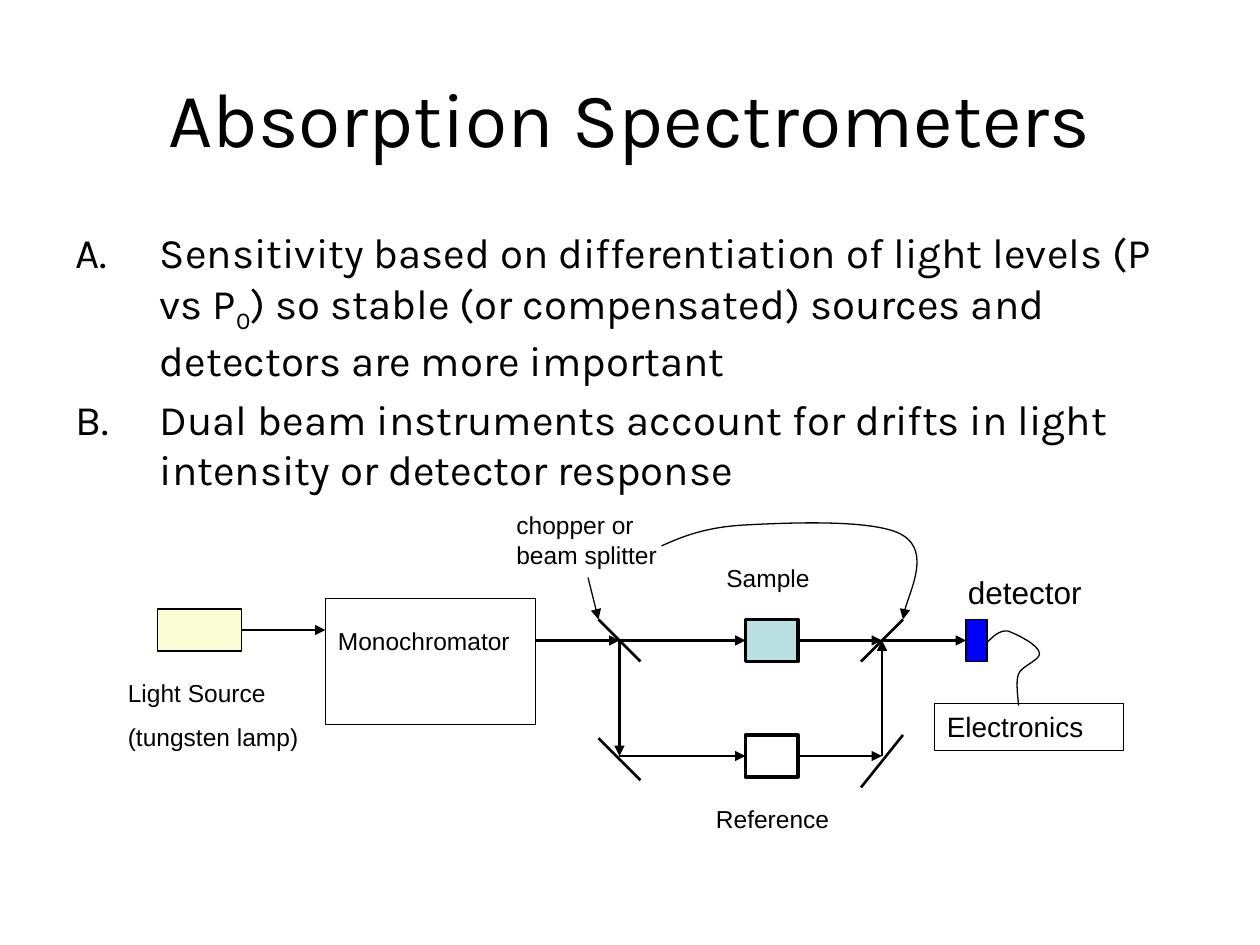
from pptx import Presentation
from pptx.dml.color import RGBColor
from pptx.enum.shapes import MSO_CONNECTOR as Connector, MSO_SHAPE as Preset
from pptx.enum.text import MSO_ANCHOR as Anchor, MSO_AUTO_SIZE as AutoSize, PP_ALIGN as Align
from pptx.oxml.ns import qn
from pptx.util import Inches, Pt
from lxml.etree import SubElement

COLORS = {"ink": "000000", "lamp": "FBFED4", "sample": "BBE0E3",
          "reference": "FFFFFF", "detector": "0000FF"}
HEADING_FONT, LABEL_FONT = "Karla", "Arial"
THIN, BEAM, CELL = 0.75, 1.5, 2
CELLS_PER_INCH = 12  # the diagram grid


def color(name):
    return RGBColor.from_string(COLORS[name])


def add_run(paragraph, text, size, font):
    run = paragraph.add_run()
    run.text = text
    run.font.size, run.font.name = Pt(size), font
    run.font.color.rgb = color("ink")
    return run


def style_line(shape, width, arrow=False):
    shape.line.color.rgb = color("ink")
    shape.line.width = Pt(width)
    if arrow:
        line = shape._element.spPr.find(qn("a:ln"))
        SubElement(line, qn("a:tailEnd"), type="triangle")


class Grid:
    """Places diagram parts by column and row, relative to a box."""

    def __init__(self, shapes, left, top):
        self.shapes, self.left, self.top = shapes, left, top

    def point(self, column, row):
        return (Inches(self.left + column / CELLS_PER_INCH),
                Inches(self.top + row / CELLS_PER_INCH))

    def box(self, column, row, columns, rows):
        return (*self.point(column, row),
                Inches(columns / CELLS_PER_INCH), Inches(rows / CELLS_PER_INCH))

    def rectangle(self, cells, fill=None, width=THIN):
        shape = self.shapes.add_shape(Preset.RECTANGLE, *self.box(*cells))
        shape.shadow.inherit = False
        if fill:
            shape.fill.solid()
            shape.fill.fore_color.rgb = color(fill)
        else:
            shape.fill.background()
        style_line(shape, width)
        return shape

    def label(self, cells, lines, size=14):
        fill_label(self.shapes.add_textbox(*self.box(*cells)), lines, size)

    def line(self, start, end, width=BEAM, arrow=False):
        connector = self.shapes.add_connector(
            Connector.STRAIGHT, *self.point(*start), *self.point(*end))
        style_line(connector, width, arrow)
        SubElement(connector._element.spPr, qn("a:effectLst"))

    def curve(self, points, arrow=False):
        """Draws a start point followed by triples of Bézier points."""
        builder = self.shapes.build_freeform(*self.point(*points[0]))
        builder.add_line_segments([self.point(*p) for p in points[1:]], close=False)
        shape = builder.convert_to_shape()
        path = next(shape._element.iter(qn("a:path")))
        segments = path.findall(qn("a:lnTo"))
        for first in range(0, len(segments), 3):
            bezier = SubElement(path, qn("a:cubicBezTo"))
            for segment in segments[first:first + 3]:
                bezier.append(segment[0])
                path.remove(segment)
        shape.fill.background()
        shape.shadow.inherit = False
        style_line(shape, THIN, arrow)


def fill_label(shape, lines, size):
    frame = shape.text_frame
    frame.word_wrap = True
    frame.vertical_anchor = Anchor.TOP
    for index, text in enumerate(lines):
        paragraph = frame.paragraphs[0] if index == 0 else frame.add_paragraph()
        paragraph.alignment = Align.LEFT
        if index:
            paragraph.space_before = Pt(8)
        add_run(paragraph, text, size, LABEL_FONT)


def add_title(slide, left, top, width, height):
    title = slide.shapes.title
    title.left, title.top = Inches(left), Inches(top)
    title.width, title.height = Inches(width), Inches(height)
    frame = title.text_frame
    frame.auto_size, frame.word_wrap = AutoSize.NONE, True
    frame.vertical_anchor = Anchor.MIDDLE
    paragraph = frame.paragraphs[0]
    paragraph.alignment = Align.CENTER
    add_run(paragraph, "Absorption Spectrometers", 44, HEADING_FONT)


def add_points(slide, left, top, width, height):
    points = [
        [("Sensitivity based on differentiation of light levels (P vs P", False),
         ("0", True),
         (") so stable (or compensated) sources and detectors are more important", False)],
        [("Dual beam instruments account for drifts in light intensity "
          "or detector response", False)],
    ]
    frame = slide.shapes.add_textbox(
        Inches(left), Inches(top), Inches(width), Inches(height)).text_frame
    frame.word_wrap = True
    for index, runs in enumerate(points):
        paragraph = frame.paragraphs[0] if index == 0 else frame.add_paragraph()
        if index:
            paragraph.space_before = Pt(5)
        # Lettered list with a hanging indent
        properties = paragraph._p.get_or_add_pPr()
        properties.set("marL", str(Inches(0.67)))
        properties.set("indent", str(-Inches(0.67)))
        SubElement(properties, qn("a:buAutoNum"), type="alphaUcPeriod")
        for text, subscript in runs:
            run = add_run(paragraph, text, 24, HEADING_FONT)
            if subscript:
                run.font._element.set("baseline", "-25000")


def add_diagram(slide, left, top):
    grid = Grid(slide.shapes, left, top)
    split, merge = 53, 78          # columns where the beams part and meet
    upper, lower = 13, 24          # rows of the sample and reference beams
    cell_left, cell_right = 65, 70

    # Instrument parts
    grid.rectangle((9, 10, 8, 4), "lamp")
    grid.rectangle((25, 9, 20, 12))
    grid.rectangle((cell_left, upper - 2, 5, 4), "sample", CELL)
    grid.rectangle((cell_left, lower - 2, 5, 4), "reference", CELL)
    grid.rectangle((86, upper - 2, 2, 4), "detector")
    fill_label(grid.rectangle((83, 19, 18, 4.5)), ["Electronics"], 16)

    # Labels
    grid.label((5, 16, 24, 8.2), ["Light Source", "(tungsten lamp)"])
    grid.label((25, 11, 19, 4), ["Monochromator"])
    grid.label((42, 0, 17, 6.8), ["chopper or beam splitter"])
    grid.label((62, 5, 13, 4), ["Sample"])
    grid.label((61, 28, 15, 4), ["Reference"])
    grid.label((85, 6, 17, 4.8), ["detector"], 18)

    # Light path
    grid.line((17, 12), (25, 12), arrow=True)
    for row in (upper, lower):
        grid.line((split, row), (cell_left, row), arrow=True)
        grid.line((cell_right, row), (merge, row), arrow=True)
    grid.line((45, upper), (split, upper), arrow=True)
    grid.line((merge, upper), (86, upper), arrow=True)
    grid.line((split, upper), (split, lower), arrow=True)
    grid.line((merge, lower), (merge, upper), arrow=True)

    # Splitters and mirrors
    grid.line((51, 11), (55, 15))
    grid.line((51, 22.3), (55, 26.3))
    grid.line((80, 11), (76, 15))
    grid.line((80, 22), (76, 27))

    # Pointers to the splitters, and the detector cable
    grid.line((50, 7), (51, 11), THIN, arrow=True)
    grid.curve([(57, 4), (59, 3.1), (61.2, 2.2), (65, 2),
                (68.9, 1.8), (77.5, 1.4), (80, 3),
                (82.6, 4.6), (80, 9.7), (80, 11)], arrow=True)
    grid.curve([(88, 13.2), (88.6, 12.6), (89.2, 12), (90, 12.1),
                (90.8, 12.4), (92.9, 13.4), (93, 14.2),
                (93.1, 14.9), (91.3, 15.4), (91, 16.2),
                (90.7, 17), (91, 18.7), (91, 19.2)])


def main():
    presentation = Presentation()
    presentation.slide_width, presentation.slide_height = Inches(10), Inches(7.5)
    slide = presentation.slides.add_slide(presentation.slide_layouts[5])
    add_title(slide, 0.5, 0.3, 9, 1.25)
    add_points(slide, 0.5, 1.75, 9, 2.39)
    add_diagram(slide, 0.5, 4)
    presentation.save("out.pptx")


if __name__ == "__main__":
    main()
